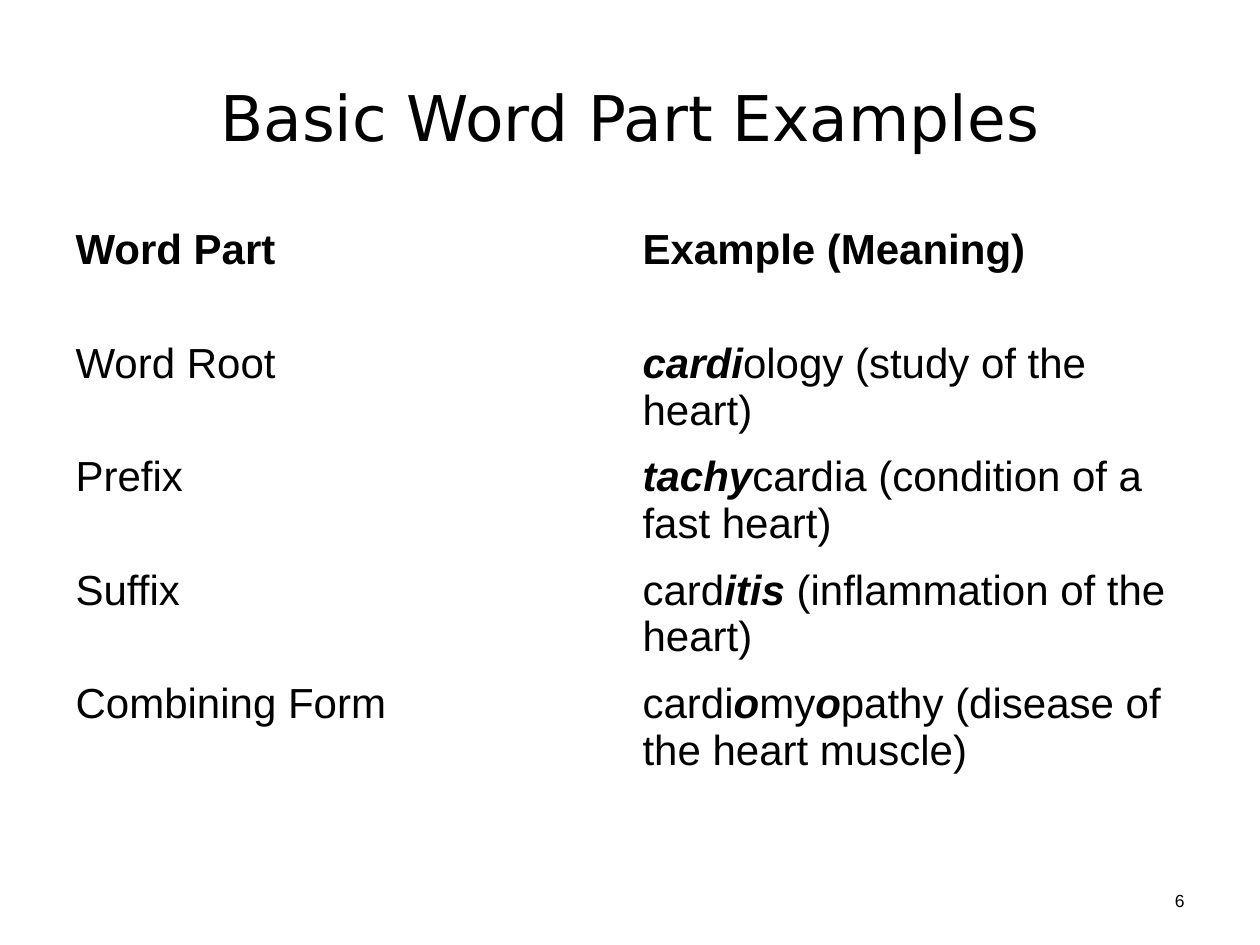
from pptx import Presentation
from pptx.dml.color import RGBColor
from pptx.enum.text import MSO_ANCHOR, PP_ALIGN
from pptx.util import Pt

BLACK = "000000"
HEADERS = ["Word Part", "Example (Meaning)"]
EXAMPLES = [
    ("Word Root", "*cardi*ology (study of the heart)"),
    ("Prefix", "*tachy*cardia (condition of a fast heart)"),
    ("Suffix", "card*itis* (inflammation of the heart)"),
    ("Combining Form", "cardi*o*my*o*pathy (disease of the heart muscle)"),
]
ROW_HEIGHTS = [64.8, 64.8, 64.8, 64.8, 93.6]


def color(hex_string):
    return RGBColor.from_string(hex_string)


def style_font(font, name, size, bold=False):
    font.name = name
    font.size = Pt(size)
    font.bold = bold
    font.color.rgb = color(BLACK)


def add_label(slide, box, text, font_name, size, alignment):
    shape = slide.shapes.add_textbox(*map(Pt, box))
    frame = shape.text_frame
    frame.word_wrap = True
    frame.vertical_anchor = MSO_ANCHOR.MIDDLE
    paragraph = frame.paragraphs[0]
    paragraph.text = text
    paragraph.alignment = alignment
    style_font(paragraph.font, font_name, size)


def fill_cell(cell, text, bold):
    cell.fill.background()
    paragraph = cell.text_frame.paragraphs[0]
    style_font(paragraph.font, "Arial", 24, bold)
    for index, part in enumerate(text.split("*")):
        if part:
            run = paragraph.add_run()
            run.text = part
            if index % 2:
                run.font.bold = True
                run.font.italic = True


def add_word_table(slide, box):
    rows = [HEADERS, *EXAMPLES]
    table = slide.shapes.add_table(len(rows), len(HEADERS), *map(Pt, box)).table
    table.first_row = False
    table.horz_banding = False
    for row, height in zip(table.rows, ROW_HEIGHTS):
        row.height = Pt(height)
    for row_index, texts in enumerate(rows):
        for column_index, text in enumerate(texts):
            fill_cell(table.cell(row_index, column_index), text, row_index == 0)


def main():
    presentation = Presentation()
    presentation.slide_width = Pt(720)
    presentation.slide_height = Pt(540)
    slide = presentation.slides.add_slide(presentation.slide_layouts[6])
    add_label(slide, (36, 21.6, 648, 90), "Basic Word Part Examples",
              "DejaVu Sans", 36, PP_ALIGN.CENTER)
    add_word_table(slide, (36, 126, 648, sum(ROW_HEIGHTS)))
    add_label(slide, (643.68, 493.2, 40.32, 43.2), "6", "Arial", 10, PP_ALIGN.RIGHT)
    presentation.save("out.pptx")


if __name__ == "__main__":
    main()
